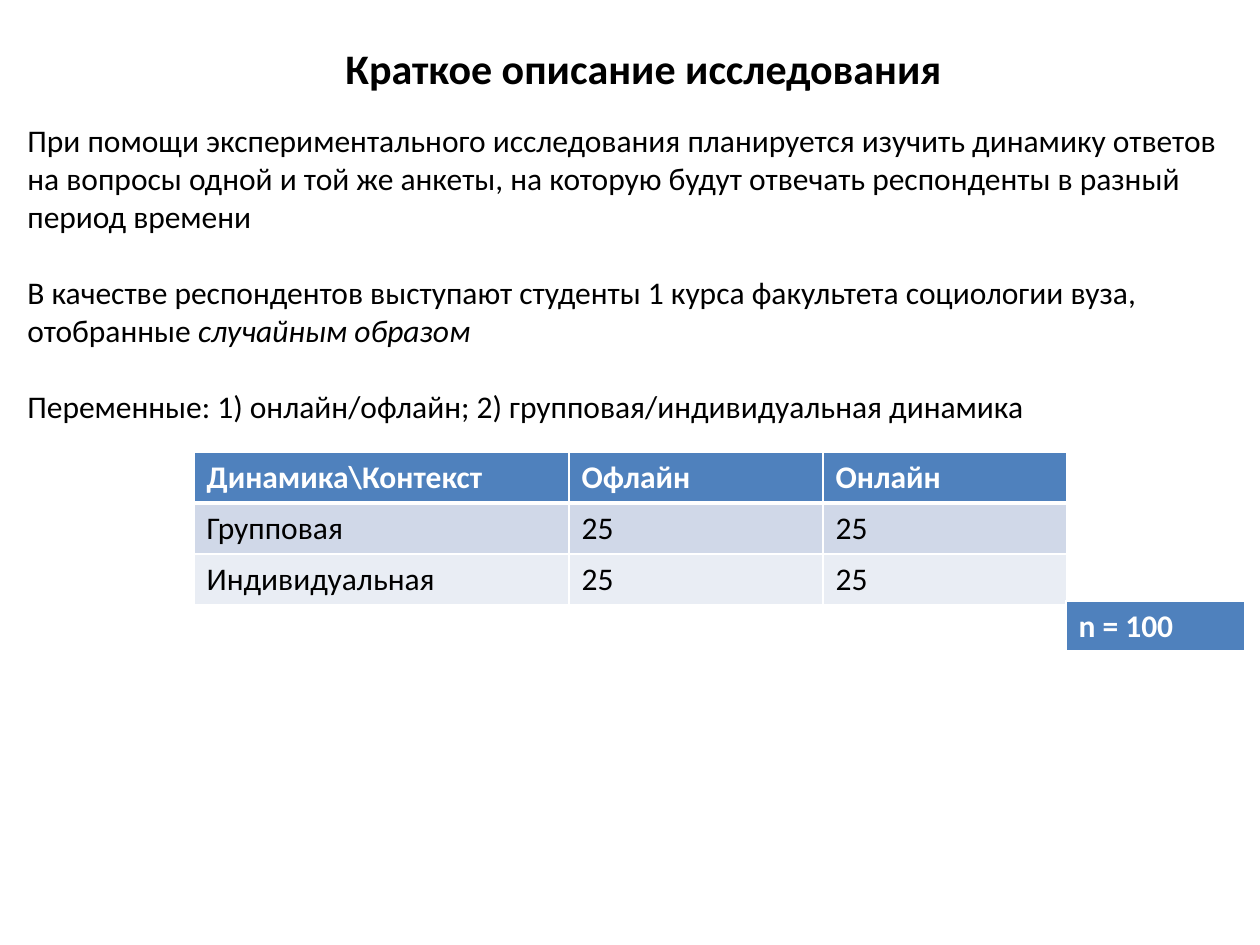
from lxml import etree
from pptx import Presentation, util as u
from pptx.dml.color import RGBColor
from pptx.enum import text
from pptx.oxml.ns import qn

FONT = "Calibri"
BLACK, WHITE, BLUE = "000000", "FFFFFF", "4F81BD"
BANDS = ["D0D8E8", "E9EDF4"]


def px(n):
    return u.Emu(round(n * 914400 / 126))


def rgb(value):
    return RGBColor.from_string(value)


def set_font(p, size, color=BLACK, bold=False):
    f = p.font
    f.name, f.size, f.bold = FONT, u.Pt(size), bold
    f.color.rgb = rgb(color)


def add_text(slide, box, paragraphs, size, bold=False, gap=0):
    """Each paragraph is a list of (text, italic) runs."""
    tf = slide.shapes.add_textbox(*map(px, box)).text_frame
    tf.word_wrap = True
    tf.auto_size = text.MSO_AUTO_SIZE.SHAPE_TO_FIT_TEXT
    for i, runs in enumerate(paragraphs):
        p = tf.paragraphs[0] if i == 0 else tf.add_paragraph()
        set_font(p, size, bold=bold)
        if i:
            p.space_before = u.Pt(gap)
        for words, italic in runs:
            r = p.add_run()
            r.text = words
            if italic:
                r.font.italic = True


def set_borders(cell, widths):
    tcPr = cell._tc.get_or_add_tcPr()
    for side, width in widths.items():
        ln = etree.SubElement(tcPr, qn("a:ln" + side), w=str(u.Pt(width)))
        fill = etree.SubElement(ln, qn("a:solidFill"))
        etree.SubElement(fill, qn("a:srgbClr"), val=WHITE)


def add_table(slide, left, top, widths, row_height, rows):
    """The first row is a header, the others are banded."""
    frame = slide.shapes.add_table(len(rows), len(widths), px(left), px(top),
                                   px(sum(widths)), px(row_height * len(rows)))
    table = frame.table
    table.first_row = table.horz_banding = False
    for column, width in zip(table.columns, widths):
        column.width = px(width)
    for i, values in enumerate(rows):
        header = i == 0
        table.rows[i].height = px(row_height)
        for j, value in enumerate(values):
            cell = table.cell(i, j)
            cell.text = value
            set_font(cell.text_frame.paragraphs[0], 18,
                     WHITE if header else BLACK, header)
            set_borders(cell, {"L": 1, "R": 1, "T": 3 if i == 1 else 1,
                               "B": 3 if header else 1})
            cell.fill.solid()
            cell.fill.fore_color.rgb = rgb(BLUE if header else BANDS[(i - 1) % 2])


def main():
    prs = Presentation()
    prs.slide_width, prs.slide_height = px(1260), px(945)
    s = prs.slides.add_slide(prs.slide_layouts[6])

    # Title and description
    add_text(s, (333, 36, 635, 63), [[("Краткое описание исследования", False)]],
             24, bold=True)
    add_text(s, (15, 115, 1230, 318), [
        [("При помощи экспериментального исследования планируется изучить "
          "динамику ответов на вопросы одной и той же анкеты, на которую будут "
          "отвечать респонденты в разный период времени", False)],
        [("В качестве респондентов выступают студенты 1 курса факультета "
          "социологии вуза, отобранные ", False),
         ("случайным образом", True)],
        [("Переменные: 1) онлайн/офлайн; 2) групповая/индивидуальная динамика",
          False)],
    ], 18, gap=22)

    # Group sizes and their total
    add_table(s, 194, 452, [375, 254, 244], 51, [
        ["Динамика\\Контекст", "Офлайн", "Онлайн"],
        ["Групповая", "25", "25"],
        ["Индивидуальная", "25", "25"],
    ])
    add_table(s, 1066, 601, [179], 51, [["n = 100"]])

    prs.save("out.pptx")


if __name__ == "__main__":
    main()
